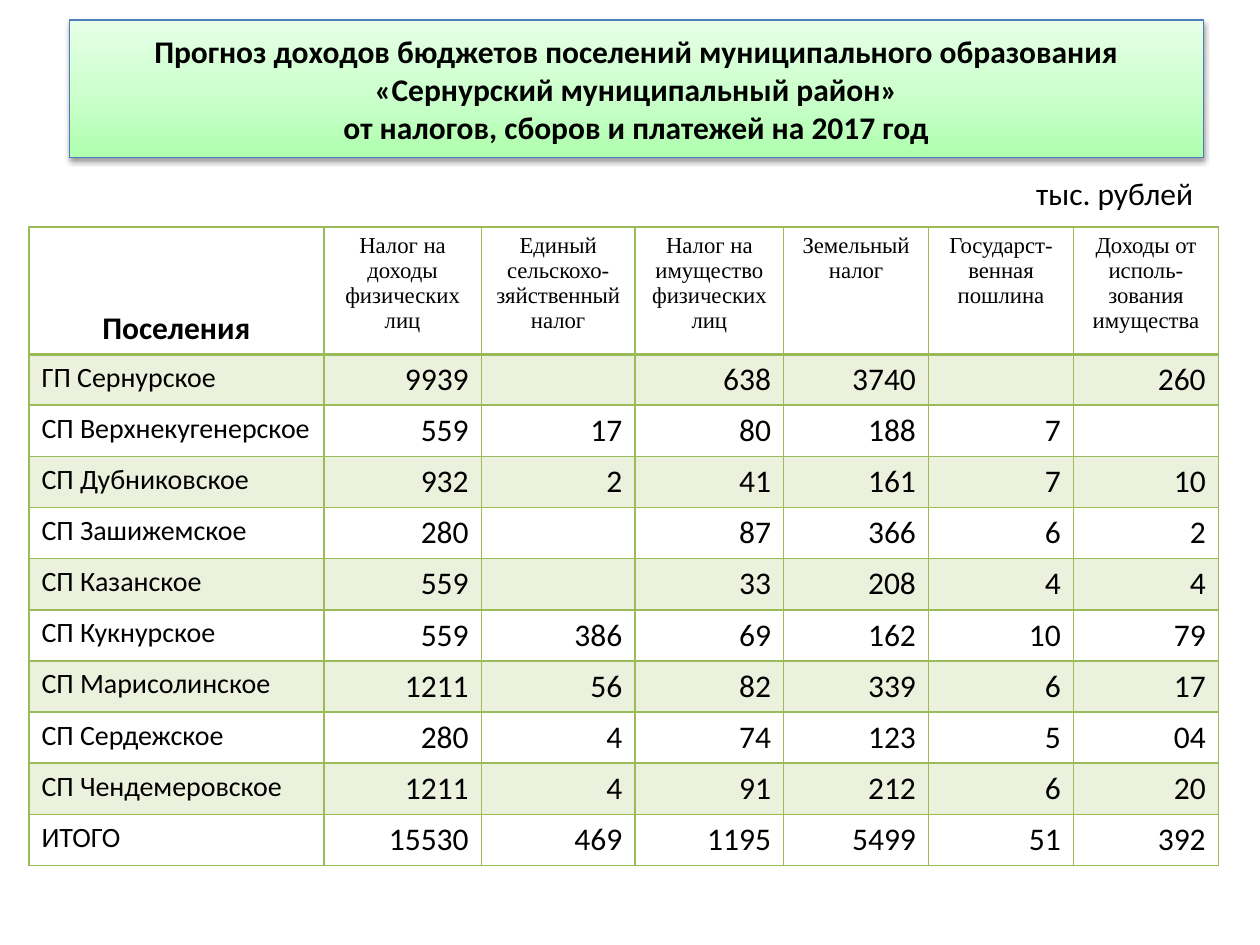
"""Build the slide with the 2017 revenue forecast for the settlements."""
from copy import deepcopy

from lxml import etree
from pptx import Presentation
from pptx.dml.color import RGBColor
from pptx.enum.text import MSO_ANCHOR, PP_ALIGN
from pptx.oxml import parse_xml
from pptx.oxml.ns import nsdecls, qn
from pptx.util import Inches, Pt

LEFT, CENTER, RIGHT = PP_ALIGN.LEFT, PP_ALIGN.CENTER, PP_ALIGN.RIGHT
TOP, MIDDLE, BOTTOM = MSO_ANCHOR.TOP, MSO_ANCHOR.MIDDLE, MSO_ANCHOR.BOTTOM
THEME = {
    "text": "000000", "green": "9BBB59", "title_line": "4B7EBC",
    "title_stops": [(0, "AFFFAF"), (0.5, "CEFFCE"), (1, "E7FFE7")],
    "sans": "Calibri", "serif": "Times New Roman",
    "large": 18, "name": 16, "heading": 13,
    "band_alpha": 20000, "rule": 1, "heading_rule": 2,
}
HEADINGS = [
    "Поселения", "Налог на доходы физических лиц",
    "Единый сельскохо-зяйственный налог", "Налог на имущество физических лиц",
    "Земельный налог", "Государст-венная пошлина",
    "Доходы от исполь-зования имущества",
]
REVENUES = [
    ["ГП Сернурское", "9939", "", "638", "3740", "", "260"],
    ["СП Верхнекугенерское", "559", "17", "80", "188", "7", ""],
    ["СП Дубниковское", "932", "2", "41", "161", "7", "10"],
    ["СП Зашижемское", "280", "", "87", "366", "6", "2"],
    ["СП Казанское", "559", "", "33", "208", "4", "4"],
    ["СП Кукнурское", "559", "386", "69", "162", "10", "79"],
    ["СП Марисолинское", "1211", "56", "82", "339", "6", "17"],
    ["СП Сердежское", "280", "4", "74", "123", "5", "04"],
    ["СП Чендемеровское", "1211", "4", "91", "212", "6", "20"],
    ["ИТОГО", "15530", "469", "1195", "5499", "51", "392"],
]
COLUMN_WIDTHS = [2.34, 1.25, 1.22, 1.18, 1.15, 1.15, 1.15]
TABLE_HEIGHT, HEADING_HEIGHT = 5.07, 1.01


def write(frame, text, size=THEME["large"], font=THEME["sans"], bold=False,
          align=LEFT, anchor=TOP):
    frame.vertical_anchor = anchor
    paragraph = getattr(frame, "text_frame", frame).paragraphs[0]
    paragraph.text = text
    paragraph.alignment = align
    for style in [paragraph.font] + [run.font for run in paragraph.runs]:
        style.size, style.name, style.bold = Pt(size), font, bold
        style.color.rgb = RGBColor.from_string(THEME["text"])


def rule_cell(cell, top, bottom):
    properties = cell._tc.get_or_add_tcPr()
    sides = {"L": THEME["rule"], "R": THEME["rule"], "T": top, "B": bottom}
    for side, width in sides.items():
        properties.append(parse_xml(
            f'<a:ln{side} {nsdecls("a")} w="{Pt(width)}"><a:solidFill>'
            f'<a:srgbClr val="{THEME["green"]}"/></a:solidFill></a:ln{side}>'))


deck = Presentation()
deck.slide_width, deck.slide_height = Inches(10), Inches(7.5)
slide = deck.slides.add_slide(deck.slide_layouts[5])

title = slide.shapes.title
title.left, title.top = Inches(0.55), Inches(0.16)
title.width, title.height = Inches(9), Inches(1.09)
title.fill.gradient()
title.fill.gradient_angle = 90
stop_list = title._element.spPr.find(".//" + qn("a:gsLst"))
stop_list.insert(1, deepcopy(stop_list[0]))
for stop, (position, color) in zip(title.fill.gradient_stops, THEME["title_stops"]):
    stop.position = position
    stop.color.rgb = RGBColor.from_string(color)
title.line.color.rgb = RGBColor.from_string(THEME["title_line"])
title.line.width = Pt(0.75)
title._element.spPr.append(parse_xml(
    f'<a:effectLst {nsdecls("a")}><a:outerShdw blurRad="{Pt(3.1)}" '
    f'dist="{Pt(1.6)}" dir="5400000" rotWithShape="0"><a:srgbClr val="000000">'
    '<a:alpha val="38000"/></a:srgbClr></a:outerShdw></a:effectLst>'))
write(title.text_frame,
      "Прогноз доходов бюджетов поселений муниципального образования "
      "«Сернурский муниципальный район»\v"
      "от налогов, сборов и платежей на 2017 год",
      bold=True, align=CENTER, anchor=MIDDLE)

table = slide.shapes.add_table(
    len(REVENUES) + 1, len(HEADINGS), Inches(0.23), Inches(1.8),
    Inches(sum(COLUMN_WIDTHS)), Inches(TABLE_HEIGHT)).table
table.first_row = table.horz_banding = False
for column, width in zip(table.columns, COLUMN_WIDTHS):
    column.width = Inches(width)
for row in table.rows:
    row.height = Inches((TABLE_HEIGHT - HEADING_HEIGHT) / len(REVENUES))
table.rows[0].height = Inches(HEADING_HEIGHT)

for row_index, entries in enumerate([HEADINGS] + REVENUES):
    for column_index, entry in enumerate(entries):
        cell = table.cell(row_index, column_index)
        rule_cell(cell,
                  THEME["heading_rule"] if row_index == 1 else THEME["rule"],
                  THEME["heading_rule"] if row_index == 0 else THEME["rule"])
        if row_index % 2:
            cell.fill.solid()
            cell.fill.fore_color.rgb = RGBColor.from_string(THEME["green"])
            band_color = cell._tc.tcPr.find(qn("a:solidFill"))[0]
            etree.SubElement(band_color, qn("a:alpha"), val=str(THEME["band_alpha"]))
        else:
            cell.fill.background()
        if row_index == 0 and column_index == 0:
            write(cell, entry, bold=True, align=CENTER, anchor=BOTTOM)
        elif row_index == 0:
            write(cell, entry, size=THEME["heading"], font=THEME["serif"], align=CENTER)
        elif column_index == 0:
            write(cell, entry, size=THEME["name"])
        else:
            write(cell, entry, align=RIGHT)

unit_note = slide.shapes.add_textbox(
    Inches(7.73), Inches(1.33), Inches(2.11), Inches(0.4)).text_frame
unit_note.word_wrap = True
unit_note.margin_right = Inches(0.37)
write(unit_note, "тыс. рублей", align=RIGHT)

deck.save("out.pptx")
